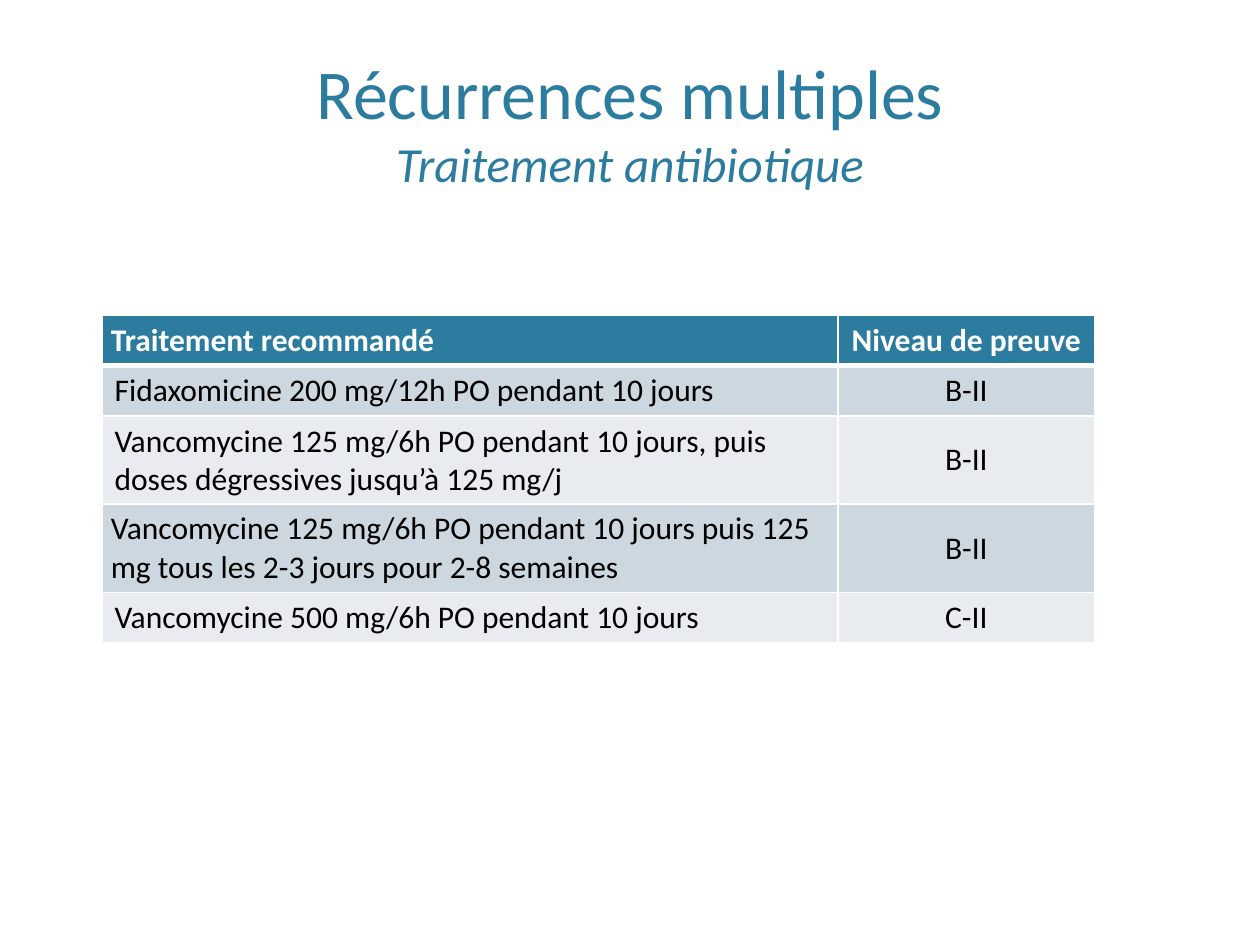
from lxml.etree import SubElement
from pptx import Presentation
from pptx.dml.color import RGBColor
from pptx.enum.text import MSO_ANCHOR, PP_ALIGN
from pptx.oxml.ns import qn
from pptx.util import Inches, Pt

TEAL, WHITE, BLACK = "2C7C9F", "FFFFFF", "000000"
BANDS = ["CDD7DF", "E8ECF0"]
NARROW, NORMAL = (0.07, 0.04), (0.1, 0.05)

# Treatment, level of evidence, row height, cell margins
ROWS = [
    ("Traitement recommandé", "Niveau de preuve", 0.4, NARROW),
    ("Fidaxomicine 200 mg/12h PO pendant 10 jours", "B-II", 0.4, NORMAL),
    ("Vancomycine 125 mg/6h PO pendant 10 jours, puis doses dégressives "
     "jusqu’à 125 mg/j", "B-II", 0.7, NORMAL),
    ("Vancomycine 125 mg/6h PO pendant 10 jours puis 125 mg tous les 2-3 jours "
     "pour 2-8 semaines", "B-II", 0.7, NARROW),
    ("Vancomycine 500 mg/6h PO pendant 10 jours", "C-II", 0.4, NORMAL),
]


def rgb(color):
    return RGBColor.from_string(color)


def add_run(p, text, color, **format_values):
    r = p.add_run()
    r.text = text
    r.font.name = "Calibri"
    r.font.color.rgb = rgb(color)
    for name, value in format_values.items():
        setattr(r.font, name, value)


def add_title(s, title, subtitle):
    tf = s.shapes.add_textbox(Inches(0.6), Inches(0.12), Inches(8.8), Inches(1.46)).text_frame
    tf.word_wrap = True
    tf.vertical_anchor = MSO_ANCHOR.BOTTOM
    p = tf.paragraphs[0]
    p.alignment = PP_ALIGN.CENTER
    add_run(p, title, TEAL, size=Pt(40))
    p.add_line_break()
    add_run(p, subtitle, TEAL, size=Pt(28), italic=True)


def set_borders(cell, widths):
    # Borders have to come before the fill, so this is called first
    tcPr = cell._tc.get_or_add_tcPr()
    for side, width in widths.items():
        ln = SubElement(tcPr, qn(f"a:ln{side}"), w=str(Pt(width)))
        fill = SubElement(ln, qn("a:solidFill"))
        SubElement(fill, qn("a:srgbClr"), val=WHITE)


def fill_cell(cell, text, margins, is_header, fill, borders, alignment):
    set_borders(cell, borders)
    cell.fill.solid()
    cell.fill.fore_color.rgb = rgb(fill)
    cell.margin_left = cell.margin_right = Inches(margins[0])
    cell.margin_top = cell.margin_bottom = Inches(margins[1])
    cell.vertical_anchor = MSO_ANCHOR.MIDDLE
    p = cell.text_frame.paragraphs[0]
    p.alignment = alignment
    add_run(p, text, WHITE if is_header else BLACK, size=Pt(18), bold=is_header)


def add_treatment_table(s):
    table = s.shapes.add_table(len(ROWS), 2, Inches(0.81), Inches(2.5),
                               Inches(7.88), Inches(2.6)).table
    for column, width in zip(table.columns, (5.84, 2.04)):
        column.width = Inches(width)
    for i, (treatment, level, height, margins) in enumerate(ROWS):
        table.rows[i].height = Inches(height)
        is_header = i == 0
        fill = TEAL if is_header else BANDS[(i - 1) % 2]
        # The rule below the header is thicker
        borders = {"L": 1, "R": 1, "T": 3 if i == 1 else 1, "B": 3 if is_header else 1}
        for j, (text, alignment) in enumerate([(treatment, PP_ALIGN.LEFT),
                                               (level, PP_ALIGN.CENTER)]):
            fill_cell(table.cell(i, j), text, margins, is_header, fill, borders, alignment)


def main():
    prs = Presentation()
    prs.slide_width, prs.slide_height = Inches(10), Inches(7.5)
    s = prs.slides.add_slide(prs.slide_layouts[6])
    add_title(s, "Récurrences multiples", "Traitement antibiotique")
    add_treatment_table(s)
    prs.save("out.pptx")


if __name__ == "__main__":
    main()
